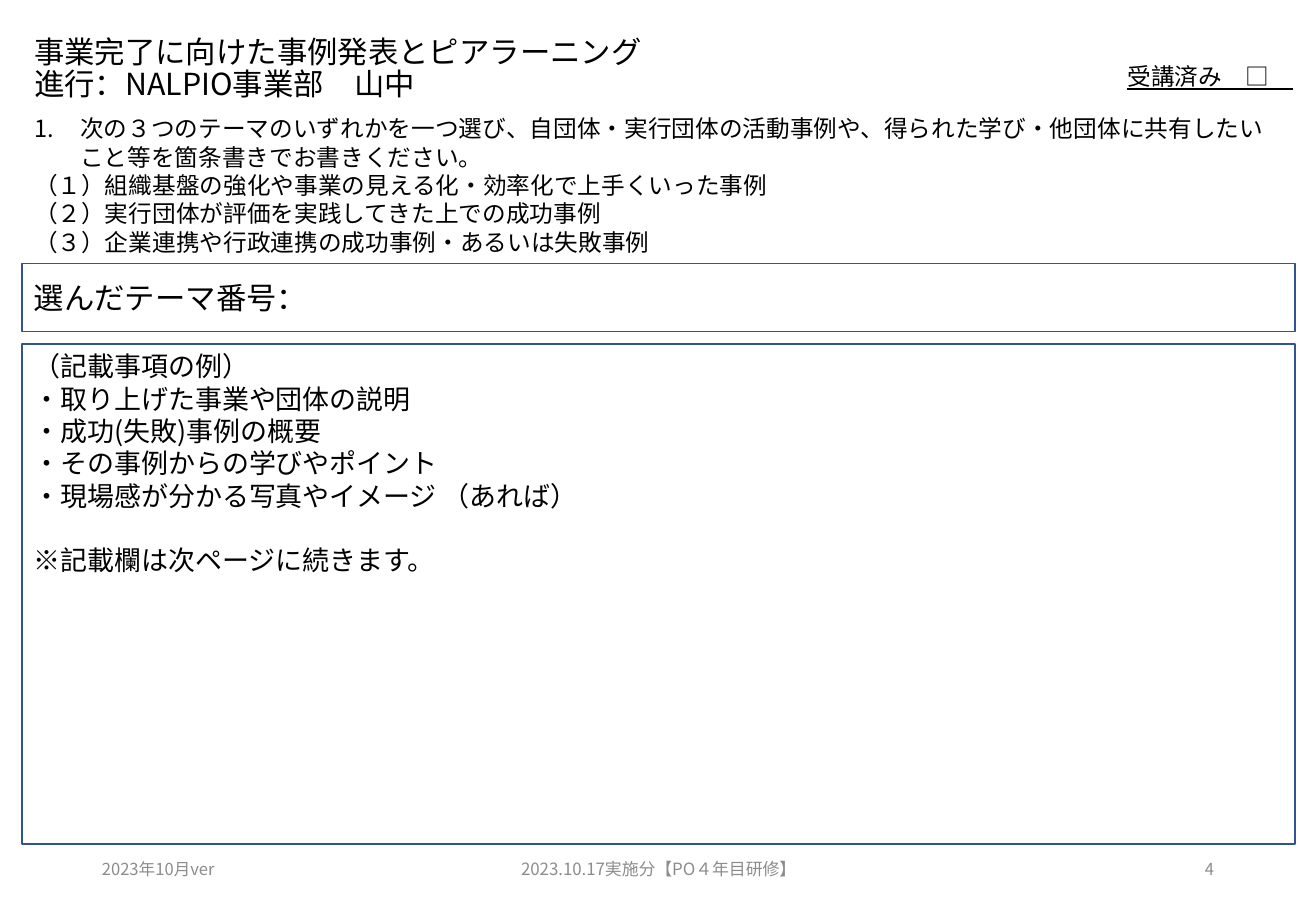
from lxml import etree
from pptx import Presentation
from pptx import util as u
from pptx.dml.color import RGBColor
from pptx.enum import shapes, text
from pptx.oxml import ns

FONT = "Noto Sans CJK JP"
BLACK = RGBColor(0x00, 0x00, 0x00)
WHITE = RGBColor(0xFF, 0xFF, 0xFF)
GRAY = RGBColor(0x8C, 0x8C, 0x8C)
BLUE = RGBColor(0x32, 0x54, 0x91)

LEFT, WIDTH = 0.18, 10.48
LINE_RATIO = 1.2
TOP, MIDDLE = text.MSO_ANCHOR.TOP, text.MSO_ANCHOR.MIDDLE
ALIGN = text.PP_ALIGN


class Worksheet:
    def __init__(self, slide):
        self.slide = slide

    def place(self, shape, left, top, width, height):
        shape.left, shape.top = u.Inches(left), u.Inches(top)
        shape.width, shape.height = u.Inches(width), u.Inches(height)

    def set_text(self, shape, content, size, color=BLACK, anchor=TOP,
                 align=ALIGN.LEFT, line_ratio=LINE_RATIO, underline=None):
        frame = shape.text_frame
        frame.text = content
        frame.word_wrap = True
        frame.auto_size = text.MSO_AUTO_SIZE.NONE
        frame.vertical_anchor = anchor
        for paragraph in frame.paragraphs:
            paragraph.alignment = align
            paragraph.line_spacing = u.Pt(round(size * line_ratio, 1))
            paragraph.space_before = u.Pt(0)
            for run in paragraph.runs:
                run.font.size = u.Pt(size)
                run.font.color.rgb = color
                run.font.underline = underline
                run.font.name = FONT
                properties = run._r.get_or_add_rPr()
                east_asian = etree.SubElement(properties, ns.qn("a:ea"))
                east_asian.set("typeface", FONT)
        return frame.paragraphs

    def title(self, content):
        shape = self.slide.shapes.title
        self.place(shape, LEFT, 0.14, 9.34, 0.86)
        self.set_text(shape, content, 18, anchor=MIDDLE, line_ratio=1.08)

    def instructions(self, content):
        """Fill the body placeholder; only its first paragraph is numbered."""
        shape = self.slide.placeholders[1]
        self.place(shape, LEFT, 0.89, WIDTH, 1.28)
        for index, paragraph in enumerate(self.set_text(shape, content, 14)):
            numbered = index == 0
            indent = u.Inches(0.38) if numbered else 0
            properties = paragraph._p.get_or_add_pPr()
            properties.set("marL", str(indent))
            properties.set("indent", str(-indent))
            if numbered:
                number = etree.SubElement(properties, ns.qn("a:buAutoNum"))
                number.set("type", "arabicPeriod")
            else:
                etree.SubElement(properties, ns.qn("a:buNone"))

    def answer_box(self, top, height, content, size, anchor=TOP):
        shape = self.slide.shapes.add_shape(
            shapes.MSO_SHAPE.RECTANGLE, u.Inches(LEFT), u.Inches(top),
            u.Inches(WIDTH), u.Inches(height))
        shape.shadow.inherit = False
        shape.fill.solid()
        shape.fill.fore_color.rgb = WHITE
        shape.line.color.rgb = BLUE
        shape.line.width = u.Pt(1)
        return self.set_text(shape, content, size, anchor=anchor)

    def label(self, left, top, width, height, content, size, **style):
        shape = self.slide.shapes.add_textbox(
            u.Inches(left), u.Inches(top), u.Inches(width), u.Inches(height))
        self.set_text(shape, content, size, **style)


def main():
    presentation = Presentation()
    presentation.slide_width = u.Inches(10.83)
    presentation.slide_height = u.Inches(7.5)
    layout = presentation.slide_layouts[1]
    sheet = Worksheet(presentation.slides.add_slide(layout))

    sheet.title("事業完了に向けた事例発表とピアラーニング\v"
                "進行：NALPIO事業部　山中")
    sheet.instructions(
        "次の３つのテーマのいずれかを一つ選び、自団体・実行団体の活動事例や、"
        "得られた学び・他団体に共有したいこと等を箇条書きでお書きください。\n"
        "（１）組織基盤の強化や事業の見える化・効率化で上手くいった事例\n"
        "（２）実行団体が評価を実践してきた上での成功事例\n"
        "（３）企業連携や行政連携の成功事例・あるいは失敗事例")
    sheet.label(9.18, 0.46, 1.6, 0.34, "受講済み　□　", 14, underline=True)

    sheet.answer_box(2.17, 0.56, "選んだテーマ番号：", 18, anchor=MIDDLE)
    examples = sheet.answer_box(
        2.83, 4.12,
        "（記載事項の例）\n"
        "・取り上げた事業や団体の説明\v"
        "・成功(失敗)事例の概要\v"
        "・その事例からの学びやポイント\v"
        "・現場感が分かる写真やイメージ （あれば）\n"
        "※記載欄は次ページに続きます。", 16)
    examples[-1].space_before = u.Pt(19.2)

    for left, width, content, size, align in (
            (0.74, 2.44, "2023年10月ver", 9.8, ALIGN.LEFT),
            (3.59, 3.66, "2023.10.17実施分【PO４年目研修】", 10, ALIGN.CENTER),
            (7.65, 2.44, "4", 9.8, ALIGN.RIGHT)):
        sheet.label(left, 6.95, width, 0.4, content, size,
                    color=GRAY, anchor=MIDDLE, align=align)

    presentation.save("out.pptx")


if __name__ == "__main__":
    main()
